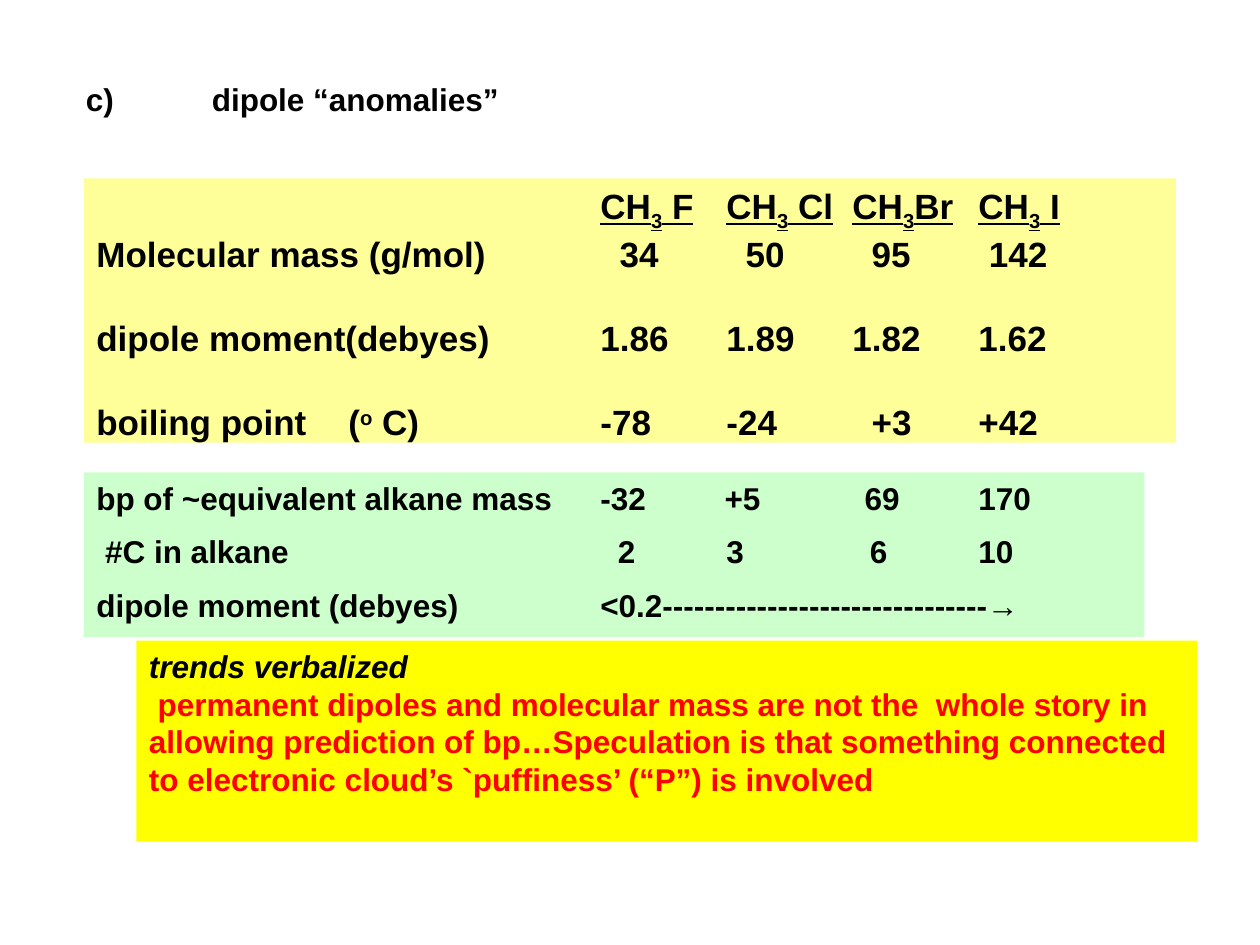
from lxml import etree
from pptx import Presentation
from pptx.dml.color import RGBColor
from pptx.enum.shapes import MSO_SHAPE
from pptx.enum.text import MSO_ANCHOR, PP_ALIGN
from pptx.oxml.ns import qn
from pptx.util import Pt

RECTANGLE = MSO_SHAPE.RECTANGLE
TOP = MSO_ANCHOR.TOP
LEFT = PP_ALIGN.LEFT

THEME = {
    "font": "Arial", "ink": "000000", "alert": "FF0000",
    "halides": "FFFF99", "alkanes": "CCFFCC", "trends": "FFFF00",
    "body": 18, "table": 20,
}
SUBSCRIPT, SUPERSCRIPT = -25000, 30000
COLUMNS = (288, 360, 432, 504)


def formula(halogen):
    return [("CH", {"underline": True}),
            ("3", {"underline": True, "baseline": SUBSCRIPT}),
            (halogen, {"underline": True})]


def row(label, values, stops=COLUMNS, before=0):
    """Return a line whose values start at the given tab stops."""
    return {"spans": [(label + "\t" + "\t".join(values), {})],
            "stops": stops, "before": before}


header_spans = [span for halogen in (" F", " Cl", "Br", " I")
                for span in [("\t", {}), *formula(halogen)]]
boiling_spans = [("boiling point\t(", {}), ("o", {"baseline": SUPERSCRIPT}),
                 (" C)\t-78\t-24\t+3\t+42", {})]

BLOCKS = [
    {"area": (48, 102, 624, 151), "fill": "halides", "size": "table", "lines": [
        {"spans": header_spans, "stops": COLUMNS},
        row("Molecular mass (g/mol)", ("34", "50", "95", "142"),
            (299, 371, 443, 510)),
        row("dipole moment(debyes)", ("1.86", "1.89", "1.82", "1.62"), before=24),
        {"spans": boiling_spans, "stops": (144, 288, 360, 443, 504), "before": 24},
    ]},
    {"area": (42, 42, 318, 29), "fill": None, "size": "body", "lines": [
        row("c)", ("dipole “anomalies”",), (72,)),
    ]},
    {"area": (78, 366, 606, 115), "fill": "trends", "size": "body", "lines": [
        {"spans": [("trends verbalized", {"italic": True})]},
        {"spans": [(" permanent dipoles and molecular mass are not the  whole "
                    "story in allowing prediction of bp…Speculation is that "
                    "something connected to electronic cloud’s `puffiness’ "
                    "(“P”) is involved", {"color": "alert"})]},
    ]},
    {"area": (48, 270, 606, 94), "fill": "alkanes", "size": "body", "lines": [
        row("bp of ~equivalent alkane mass", ("-32", "+5", "69", "170"),
            (288, 359, 439, 504)),
        row(" #C in alkane", ("2", "3", "6", "10"), (298, 360, 442, 504), before=9),
        row("dipole moment (debyes)", ("<0.2" + "-" * 31 + "→",), before=9),
    ]},
]


def add_span(para, text, style, size):
    span = para.add_run()
    span.text = text
    formats = {"name": THEME["font"], "size": Pt(size), "bold": True,
               "italic": style.get("italic", False),
               "underline": style.get("underline", False)}
    for name, value in formats.items():
        setattr(span.font, name, value)
    span.font.color.rgb = RGBColor.from_string(THEME[style.get("color", "ink")])
    if "baseline" in style:
        span._r.get_or_add_rPr().set("baseline", str(style["baseline"]))


def add_line(para, line, size):
    formats = {"alignment": LEFT, "space_before": Pt(line.get("before", 0))}
    for name, value in formats.items():
        setattr(para, name, value)
    if "stops" in line:
        tabs = etree.SubElement(para._p.get_or_add_pPr(), qn("a:tabLst"))
        for stop in line["stops"]:
            etree.SubElement(tabs, qn("a:tab"), pos=str(Pt(stop)), algn="l")
    for text, style in line["spans"]:
        add_span(para, text, style, size)


def add_block(page, block):
    area = [Pt(length) for length in block["area"]]
    if block["fill"]:
        box = page.shapes.add_shape(RECTANGLE, *area)
        box.shadow.inherit = False
        box.fill.solid()
        box.fill.fore_color.rgb = RGBColor.from_string(THEME[block["fill"]])
        box.line.fill.background()
    else:
        box = page.shapes.add_textbox(*area)
    frame = box.text_frame
    frame.word_wrap = True
    frame.vertical_anchor = TOP
    for index, line in enumerate(block["lines"]):
        para = frame.add_paragraph() if index else frame.paragraphs[0]
        add_line(para, line, THEME[block["size"]])


def main():
    deck = Presentation()
    deck.slide_width, deck.slide_height = Pt(720), Pt(540)
    page = deck.slides.add_slide(deck.slide_layouts[6])
    for block in BLOCKS:
        add_block(page, block)
    deck.save("out.pptx")


if __name__ == "__main__":
    main()
